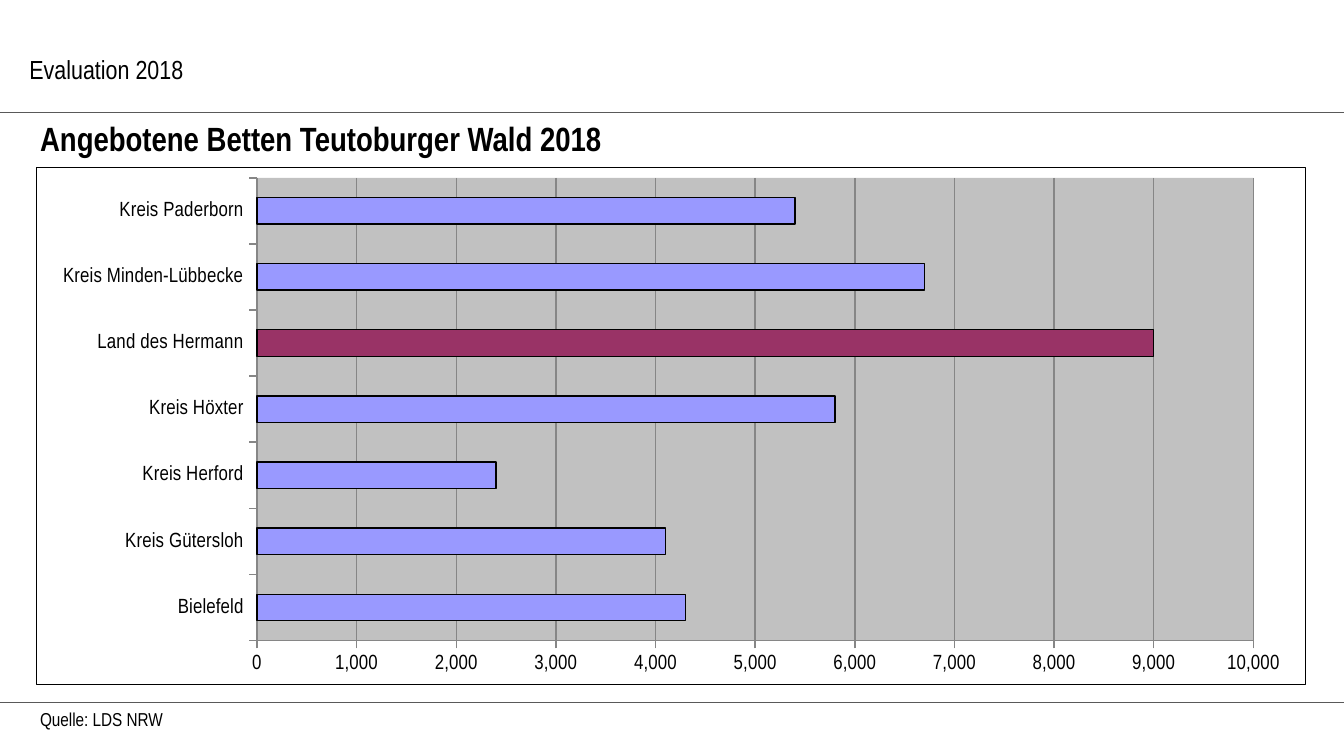
"""Build the slide on beds offered in the Teutoburger Wald in 2018."""
from pptx import Presentation
from pptx.chart.data import CategoryChartData as Data
from pptx.dml.color import RGBColor as Rgb
from pptx.enum.chart import XL_CHART_TYPE as Kind, XL_TICK_MARK as Tick
from pptx.enum.shapes import MSO_CONNECTOR as Link
from pptx.oxml import parse_xml
from pptx.oxml.ns import nsdecls, qn
from pptx.util import Inches, Pt

BLACK = Rgb(0, 0, 0)
RULE = Rgb(0x59, 0x59, 0x59)
GRID = Rgb(0x86, 0x86, 0x86)
PLOT = Rgb(0xC1, 0xC1, 0xC1)
BLUE = Rgb(0x99, 0x99, 0xFF)
PLUM = Rgb(0x99, 0x33, 0x66)
FONT = "Arial Narrow"
WIDE = 10
HIGH = WIDE * 9 / 16

BEDS = {
    "Bielefeld": 4300,
    "Kreis Gütersloh": 4100,
    "Kreis Herford": 2400,
    "Kreis Höxter": 5800,
    "Land des Hermann": 9000,
    "Kreis Minden-Lübbecke": 6700,
    "Kreis Paderborn": 5400,
}
MARKED = "Land des Hermann"
TEXTS = [
    ("Angebotene Betten Teutoburger Wald 2018", (0.2, 0.83, 9.45, 0.4), {"size": Pt(18), "bold": True}),
    ("Quelle: LDS NRW", (0.2, 5.22, 1.42, 0.27), {"size": Pt(10)}),
    ("Evaluation 2018", (0.12, 0.35, 9.69, 0.64), {"size": Pt(14)}),
]
RULES = [(-0.04, 5.23), (0, 0.84)]
FRAME = (0.27, 1.24, 9.45, 3.86)
INNER = (1.91, 1.32, 7.42, 3.45)


def style(font, form):
    for key, val in ({"name": FONT} | form).items():
        setattr(font, key, val)
    font.color.rgb = BLACK


def stroke(line, color, width):
    line.color.rgb = color
    line.width = Pt(width)


def add_text(slide, text, at, form):
    box = slide.shapes.add_textbox(*map(Inches, at))
    box.text_frame.word_wrap = True
    para = box.text_frame.paragraphs[0]
    para.text = text
    style(para.runs[0].font, form)


def add_rule(slide, left, top):
    rule = slide.shapes.add_connector(Link.STRAIGHT, *map(Inches, (left, top, WIDE, top)))
    stroke(rule.line, RULE, 0.5)
    rule._element.spPr.append(parse_xml(f"<a:effectLst {nsdecls('a')}/>"))


def frame_plot(chart):
    space = chart._chartSpace
    area = space.chart.plotArea
    for old in area.findall(qn("c:layout")):
        area.remove(old)
    left, top, width, height = FRAME
    x, y, w, h = INNER
    share = {"x": (x - left) / width, "y": (y - top) / height, "w": w / width, "h": h / height}
    parts = "".join(f'<c:{key}Mode val="edge"/>' for key in "xy")
    parts += "".join(f'<c:{key} val="{val}"/>' for key, val in share.items())
    area.insert(0, parse_xml(
        f'<c:layout {nsdecls("c")}><c:manualLayout><c:layoutTarget val="inner"/>'
        f"{parts}</c:manualLayout></c:layout>"))
    area.append(parse_xml(
        f'<c:spPr {nsdecls("c", "a")}><a:solidFill><a:srgbClr val="{PLOT}"/></a:solidFill>'
        "<a:ln><a:noFill/></a:ln></c:spPr>"))
    space.chart.addnext(parse_xml(
        f'<c:spPr {nsdecls("c", "a")}><a:noFill/><a:ln w="{Pt(0.5)}"><a:solidFill>'
        f'<a:srgbClr val="{BLACK}"/></a:solidFill></a:ln></c:spPr>'))


def add_beds(slide):
    data = Data()
    data.categories = list(BEDS)
    data.add_series("Series 1", list(BEDS.values()))
    chart = slide.shapes.add_chart(Kind.BAR_CLUSTERED, *map(Inches, FRAME), data).chart
    chart.has_legend = chart.has_title = False
    style(chart.font, {"size": Pt(11)})
    plot = chart.plots[0]
    plot.gap_width = 150
    plot.vary_by_categories = False
    bars = plot.series[0]
    mark = bars.points[list(BEDS).index(MARKED)]
    for part, color in ((bars, BLUE), (mark, PLUM)):
        part.format.fill.solid()
        part.format.fill.fore_color.rgb = color
        stroke(part.format.line, BLACK, 0.75)
    for axis in (chart.category_axis, chart.value_axis):
        axis.major_tick_mark = Tick.OUTSIDE
        axis.minor_tick_mark = Tick.NONE
        stroke(axis.format.line, GRID, 0.75)
    scale = chart.value_axis
    for key, val in {"minimum_scale": 0, "maximum_scale": 10000, "major_unit": 1000}.items():
        setattr(scale, key, val)
    scale.has_major_gridlines = True
    stroke(scale.major_gridlines.format.line, GRID, 0.75)
    scale.tick_labels.number_format = "#,##0"
    scale.tick_labels.number_format_is_linked = False
    frame_plot(chart)


def main():
    deck = Presentation()
    deck.slide_width, deck.slide_height = Inches(WIDE), Inches(HIGH)
    slide = deck.slides.add_slide(deck.slide_layouts[6])
    for rule in RULES:
        add_rule(slide, *rule)
    add_beds(slide)
    for text in TEXTS:
        add_text(slide, *text)
    deck.save("out.pptx")


if __name__ == "__main__":
    main()
